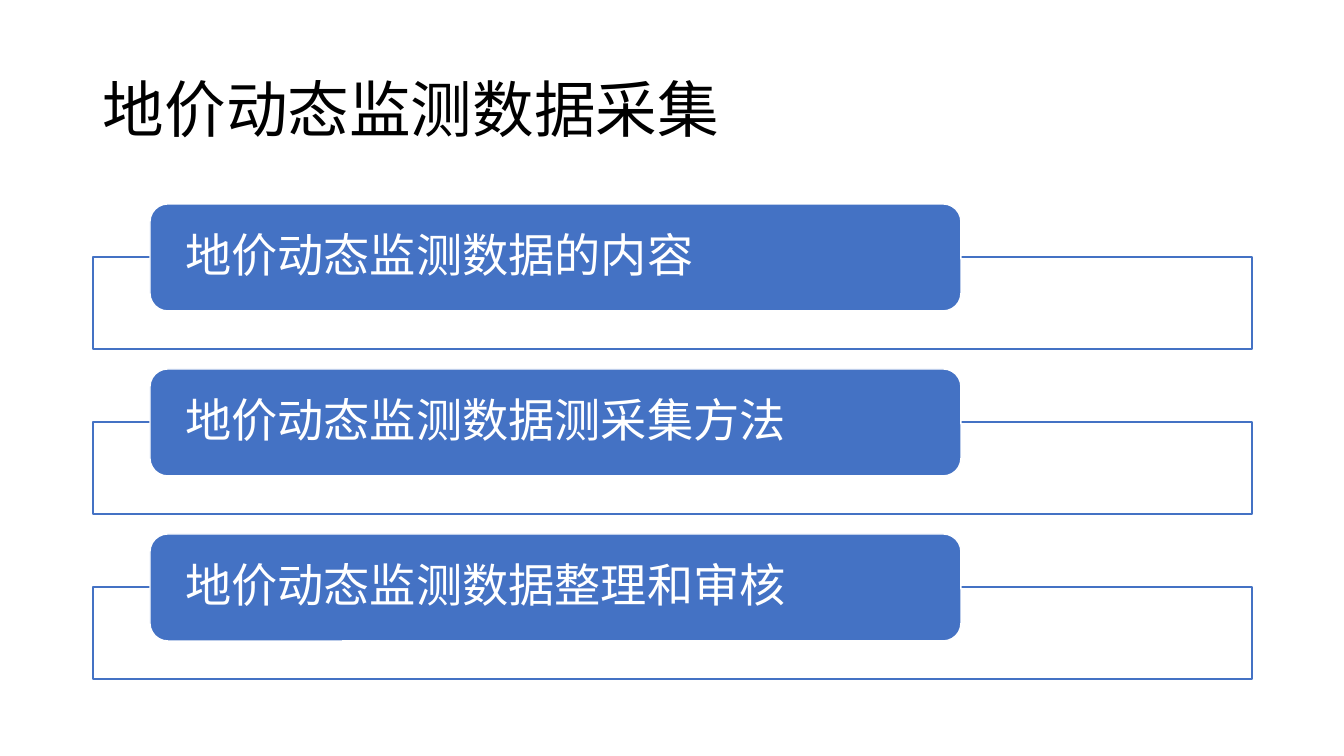
from lxml.etree import SubElement
from pptx import Presentation
from pptx.dml.color import RGBColor
from pptx.enum.shapes import MSO_SHAPE as Shape
from pptx.enum.text import MSO_ANCHOR as Anchor, PP_ALIGN as Align
from pptx.oxml.ns import qn
from pptx.util import Pt

EMU_PER_PX = 914400 / 100.8
BLUE = RGBColor(0x44, 0x72, 0xC4)
WHITE = RGBColor(0xFF, 0xFF, 0xFF)
BLACK = RGBColor(0, 0, 0)

TOPICS = ["地价动态监测数据的内容", "地价动态监测数据测采集方法", "地价动态监测数据整理和审核"]
LEFT, WIDTH = 93, 1159
ROW_TOP, ROW_PITCH = 204, 165


def px(length):
    return round(length * EMU_PER_PX)


def write(frame, text, *, size, color, font, inset=(10, 5)):
    """Put one left-aligned, vertically centred line into a text frame."""
    frame.word_wrap = True
    frame.vertical_anchor = Anchor.MIDDLE
    frame.margin_left = frame.margin_right = px(inset[0])
    frame.margin_top = frame.margin_bottom = px(inset[1])
    line = frame.paragraphs[0]
    line.alignment = Align.LEFT
    line.line_spacing = 0.9
    run = line.add_run()
    run.text = text
    run.font.size = Pt(size)
    run.font.color.rgb = color
    run.font.name = font
    # East Asian characters take their own typeface
    SubElement(run.font._element, qn("a:ea"), typeface=font)


class TopicSlide:
    font = "Noto Sans CJK SC"

    def __init__(self, deck):
        self.slide = deck.slides.add_slide(deck.slide_layouts[6])

    def title(self, text, *box):
        heading = self.slide.shapes.add_textbox(*map(px, box))
        write(heading.text_frame, text, size=44, color=BLACK, font=self.font)

    def block(self, kind, fill, outline, *box):
        block = self.slide.shapes.add_shape(kind, *map(px, box))
        block.shadow.inherit = False
        block.fill.solid()
        block.fill.fore_color.rgb = fill
        block.line.color.rgb = outline
        block.line.width = Pt(1)
        return block

    def topic(self, text, top):
        # Outlined frame behind, filled label across its upper edge
        frame = self.block(Shape.RECTANGLE, WHITE, BLUE, LEFT, top + 53, WIDTH, 92)
        alpha = frame.fill._xPr.find(qn("a:solidFill"))[0]
        SubElement(alpha, qn("a:alpha"), val="90000")
        label = self.block(Shape.ROUNDED_RECTANGLE, BLUE, WHITE, 150, top, 811, 107)
        write(label.text_frame, text, size=33, color=WHITE, font=self.font, inset=(30, 0))


def main():
    deck = Presentation()
    deck.slide_width, deck.slide_height = px(1344), px(756)
    page = TopicSlide(deck)

    # Heading
    page.title("地价动态监测数据采集", LEFT, 40, WIDTH, 146)

    # Three topics at an equal pitch
    for row, topic in enumerate(TOPICS):
        page.topic(topic, ROW_TOP + row * ROW_PITCH)

    deck.save("out.pptx")


if __name__ == "__main__":
    main()
